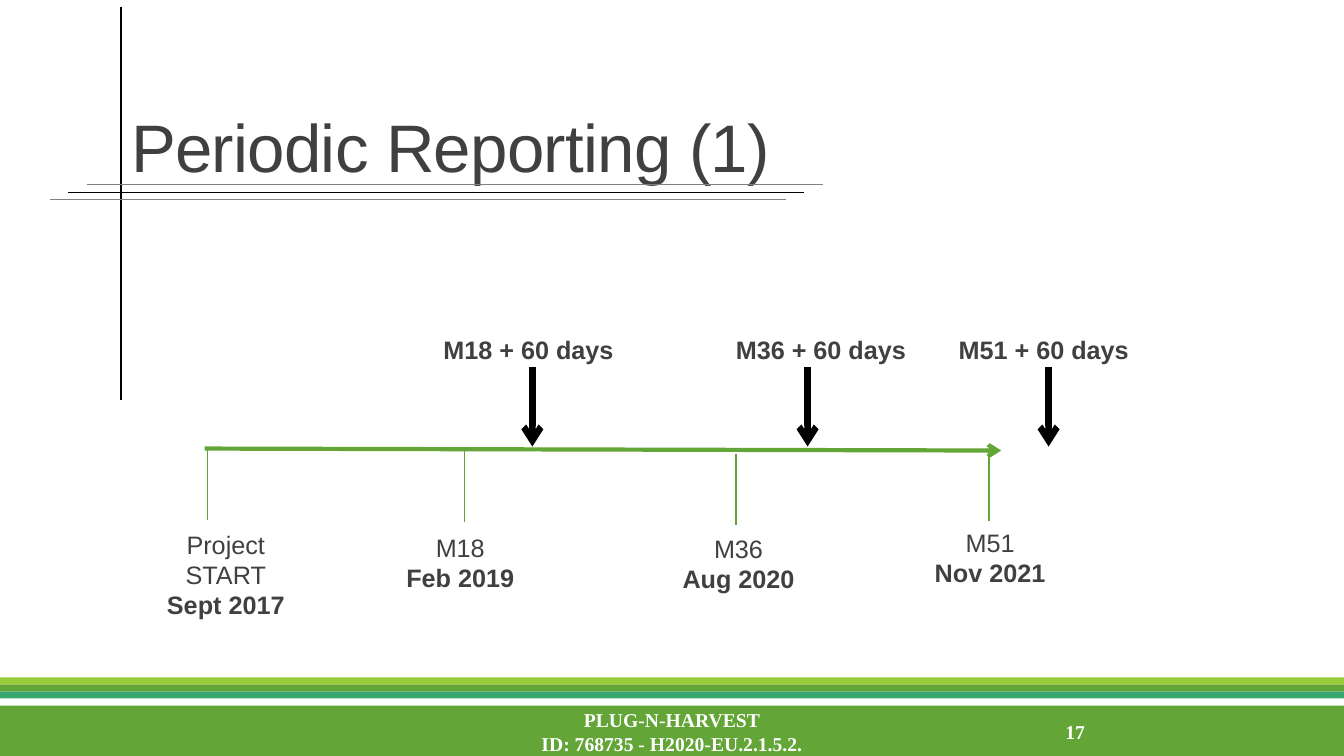
"""Build the periodic reporting timeline slide."""
from dataclasses import dataclass
from typing import Optional

from lxml.etree import SubElement
from pptx import Presentation
from pptx.dml.color import RGBColor
from pptx.enum.shapes import MSO_CONNECTOR, MSO_SHAPE
from pptx.enum.text import MSO_ANCHOR, MSO_AUTO_SIZE, PP_ALIGN
from pptx.oxml.ns import qn
from pptx.slide import Slide
from pptx.text.text import TextFrame
from pptx.util import Inches, Pt


@dataclass(frozen=True)
class Theme:
    lime: str = "99CB38"
    green: str = "63A537"
    teal: str = "37A76F"
    black: str = "000000"
    grey: str = "808080"
    text: str = "404040"
    white: str = "FFFFFF"
    body_font: str = "Arial"
    footer_font: str = "Times New Roman"
    title_size: int = 48
    body_size: int = 18
    footer_size: int = 14


@dataclass(frozen=True)
class Band:
    top: float
    height: float
    color: str


@dataclass(frozen=True)
class Rule:
    start: tuple[float, float]
    end: tuple[float, float]
    color: str
    weight: float


@dataclass(frozen=True)
class Milestone:
    name: str
    date: str
    tick: tuple[float, float]
    label: tuple[float, float, float, float]


@dataclass(frozen=True)
class Deadline:
    text: str
    arrow_x: float
    label_left: float


THEME = Theme()
WIDTH, HEIGHT = 13.33, 7.5
TICK_LENGTH = 0.71
ARROW_TOP, ARROW_BOTTOM = 3.64, 4.43

BANDS = [
    Band(6.86, 0.07, THEME.teal),
    Band(6.79, 0.07, THEME.green),
    Band(6.72, 0.07, THEME.lime),
    Band(7, 0.5, THEME.green),
]
RULES = [
    Rule((0.67, 1.91), (7.97, 1.91), THEME.black, 1),
    Rule((1.2, 0.07), (1.2, 3.97), THEME.black, 1),
    Rule((0.86, 1.83), (8.16, 1.83), THEME.grey, 0.5),
    Rule((0.5, 1.98), (7.8, 1.98), THEME.grey, 0.5),
]
MILESTONES = [
    Milestone("Project START", "Sept 2017", (2.06, 4.45), (1.51, 5.2, 1.46, 1.01)),
    Milestone("M18", "Feb 2019", (4.61, 4.47), (3.72, 5.23, 1.69, 0.71)),
    Milestone("M36", "Aug 2020", (7.3, 4.5), (6.63, 5.24, 1.39, 0.71)),
    Milestone("M51", "Nov 2021", (9.81, 4.46), (9.17, 5.18, 1.3, 0.71)),
]
DEADLINES = [
    Deadline("M18 + 60 days", 5.28, 4.3),
    Deadline("M36 + 60 days", 8.01, 7.2),
    Deadline("M51 + 60 days", 10.4, 9.41),
]


def draw_band(page: Slide, band: Band) -> None:
    shape = page.shapes.add_shape(
        MSO_SHAPE.RECTANGLE, 0, Inches(band.top), Inches(WIDTH), Inches(band.height)
    )
    shape.shadow.inherit = False
    shape.fill.solid()
    shape.fill.fore_color.rgb = RGBColor.from_string(band.color)
    shape.line.fill.background()


def draw_rule(page: Slide, rule: Rule, arrow: bool = False) -> None:
    points = [Inches(value) for value in (*rule.start, *rule.end)]
    connector = page.shapes.add_connector(MSO_CONNECTOR.STRAIGHT, *points)
    connector.line.color.rgb = RGBColor.from_string(rule.color)
    connector.line.width = Pt(rule.weight)
    if arrow:
        SubElement(connector.line._get_or_add_ln(), qn("a:tailEnd"), type="arrow")
    SubElement(connector._element.spPr, qn("a:effectLst"))


def write(
    frame: TextFrame,
    *lines: str,
    size: int = THEME.body_size,
    font: str = THEME.body_font,
    color: str = THEME.text,
    bold: tuple[bool, ...] = (False,),
    align: PP_ALIGN = PP_ALIGN.LEFT,
    anchor: MSO_ANCHOR = MSO_ANCHOR.TOP,
    line_spacing: Optional[float] = None,
    tracking: Optional[int] = None,
) -> None:
    frame.word_wrap = True
    frame.auto_size = MSO_AUTO_SIZE.NONE
    frame.vertical_anchor = anchor
    para = frame.paragraphs[0]
    para.alignment = align
    para.line_spacing = line_spacing
    for index, line in enumerate(lines):
        if index:
            para.add_line_break()
        span = para.add_run()
        span.text = line
        span.font.size = Pt(size)
        span.font.name = font
        span.font.bold = bold[index % len(bold)]
        span.font.color.rgb = RGBColor.from_string(color)
        if tracking is not None:
            span.font._element.set("spc", str(tracking))


def add_box(page: Slide, left: float, top: float, width: float, height: float) -> TextFrame:
    box = page.shapes.add_textbox(Inches(left), Inches(top), Inches(width), Inches(height))
    return box.text_frame


def draw_title(page: Slide) -> None:
    title = page.shapes.title
    title.left, title.top = Inches(1.2), Inches(0.31)
    title.width, title.height = Inches(11), Inches(1.59)
    write(title.text_frame, "Periodic Reporting (1)", size=THEME.title_size,
          anchor=MSO_ANCHOR.BOTTOM, line_spacing=0.85, tracking=-50)


def draw_footer(page: Slide) -> None:
    style = dict(size=THEME.footer_size, font=THEME.footer_font, color=THEME.white,
                 bold=(True,), anchor=MSO_ANCHOR.MIDDLE)
    write(add_box(page, 4.03, 7.06, 5.27, 0.4), "PLUG-N-HARVEST",
          "ID: 768735 - H2020-EU.2.1.5.2.", align=PP_ALIGN.CENTER, **style)
    write(add_box(page, 9.43, 7.06, 1.43, 0.4), "17", align=PP_ALIGN.RIGHT, **style)


def draw_milestone(page: Slide, milestone: Milestone) -> None:
    left, top = milestone.tick
    draw_rule(page, Rule((left, top), (left, top + TICK_LENGTH), THEME.green, 1))
    write(add_box(page, *milestone.label), milestone.name, milestone.date,
          bold=(False, True), align=PP_ALIGN.CENTER)


def draw_deadline(page: Slide, deadline: Deadline) -> None:
    start, end = (deadline.arrow_x, ARROW_TOP), (deadline.arrow_x, ARROW_BOTTOM)
    draw_rule(page, Rule(start, end, THEME.black, 4.5), arrow=True)
    write(add_box(page, deadline.label_left, 3.27, 1.9, 0.4), deadline.text, bold=(True,))


def main() -> None:
    deck = Presentation()
    deck.slide_width, deck.slide_height = Inches(WIDTH), Inches(HEIGHT)
    page = deck.slides.add_slide(deck.slide_layouts[5])
    for band in BANDS:
        draw_band(page, band)
    for rule in RULES:
        draw_rule(page, rule)
    draw_footer(page)
    draw_title(page)
    draw_rule(page, Rule((2.03, 4.45), (9.93, 4.47), THEME.green, 3), arrow=True)
    for milestone in MILESTONES:
        draw_milestone(page, milestone)
    for deadline in DEADLINES:
        draw_deadline(page, deadline)
    deck.save("out.pptx")


if __name__ == "__main__":
    main()
